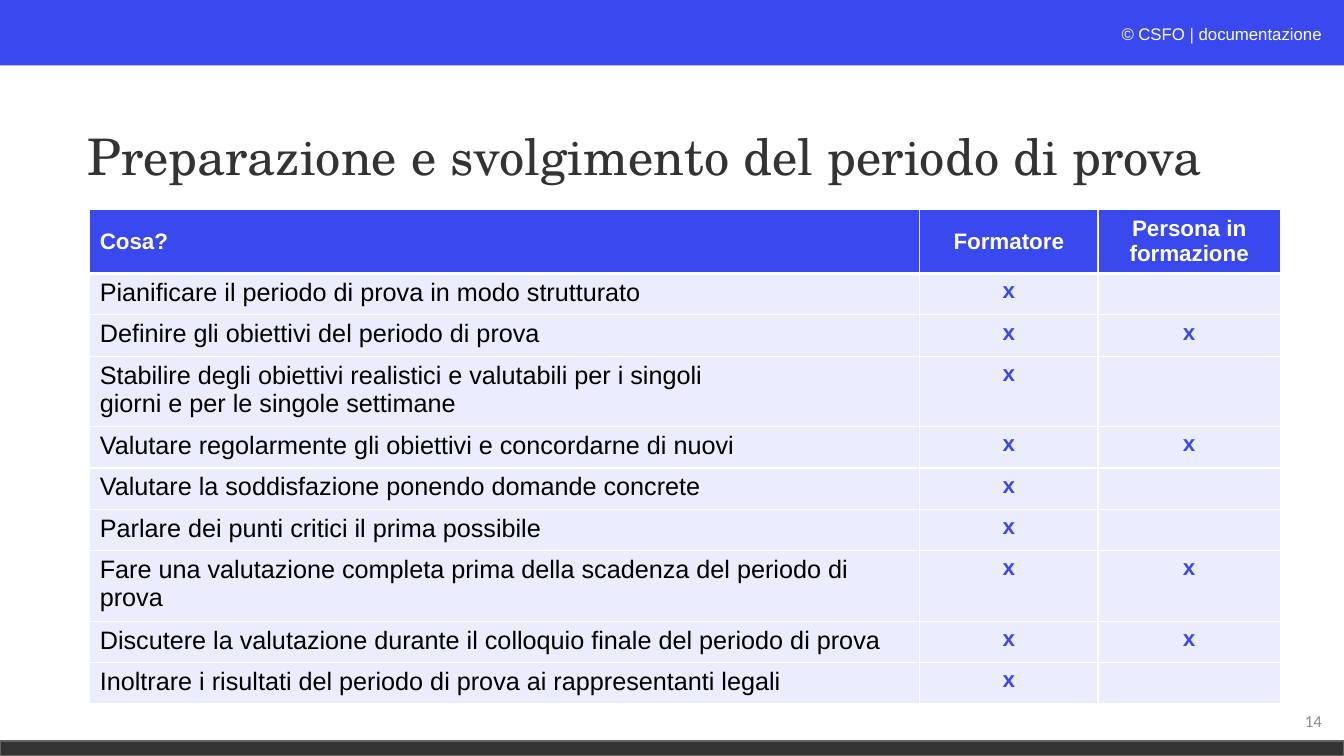
from dataclasses import dataclass

from lxml import etree
from pptx import Presentation
from pptx.dml import color
from pptx.enum import shapes, text
from pptx.oxml import ns
from pptx.util import Inches, Pt

LEFT, MID, RIGHT = text.PP_ALIGN.LEFT, text.PP_ALIGN.CENTER, text.PP_ALIGN.RIGHT
TOP, CENTER = text.MSO_ANCHOR.TOP, text.MSO_ANCHOR.MIDDLE


@dataclass(frozen=True)
class Theme:
    blue: str = "3A49EE"
    pale: str = "EBECFE"
    dark: str = "333333"
    edge: str = "666360"
    gray: str = "8C8C8C"
    white: str = "FFFFFF"
    mark: str = "FCFDFE"
    black: str = "000000"
    sans: str = "Arial"
    serif: str = "TeX Gyre Schola"
    plain: str = "Calibri"
    title: int = 36
    body: int = 18
    head: int = 16
    small: int = 12


class Deck:
    def __init__(self, theme):
        self.theme = theme
        self.show = Presentation()
        self.show.slide_width = Inches(13.33)
        self.show.slide_height = Inches(7.5)
        self.slide = self.show.slides.add_slide(self.show.slide_layouts[6])

    def style(self, frame, size, tint, face, align=LEFT, bold=False):
        for para in frame.paragraphs:
            para.alignment = align
            for run in para.runs:
                font = run.font
                font.size, font.name, font.bold = Pt(size), face, bold
                font.color.rgb = color.RGBColor.from_string(tint)

    def bar(self, box, fill, edge=None):
        bar = self.slide.shapes.add_shape(
            shapes.MSO_SHAPE.RECTANGLE, *map(Inches, box))
        bar.shadow.inherit = False
        bar.fill.solid()
        bar.fill.fore_color.rgb = color.RGBColor.from_string(fill)
        if edge:
            bar.line.color.rgb = color.RGBColor.from_string(edge)
            bar.line.width = Pt(1)
        else:
            bar.line.fill.background()

    def label(self, box, words, size, tint, face, align=LEFT, anchor=CENTER):
        frame = self.slide.shapes.add_textbox(*map(Inches, box)).text_frame
        frame.word_wrap = True
        frame.vertical_anchor = anchor
        frame.text = words
        self.style(frame, size, tint, face, align)
        return frame.paragraphs[0]

    def border(self, cell, **widths):
        props = cell._tc.get_or_add_tcPr()
        for side in "LRTB":
            line = etree.SubElement(props, ns.qn(f"a:ln{side}"),
                                    w=str(Pt(widths.get(side, 1))))
            fill = etree.SubElement(line, ns.qn("a:solidFill"))
            etree.SubElement(fill, ns.qn("a:srgbClr"), val=self.theme.white)

    def cell(self, cell, words, row, col):
        t = self.theme
        self.border(cell, **({"B": 3} if row == 0 else {"T": 3} if row == 1 else {}))
        cell.fill.solid()
        cell.fill.fore_color.rgb = color.RGBColor.from_string(t.pale if row else t.blue)
        cell.vertical_anchor = TOP if row else CENTER
        cell.text_frame.text = words
        if row and not col:
            size, tint, bold = t.body, t.black, False
        else:
            size, tint, bold = t.head, t.blue if row else t.white, True
        self.style(cell.text_frame, size, tint, t.sans, MID if col else LEFT, bold)

    def table(self, box, rows, widths, heights):
        grid = self.slide.shapes.add_table(
            len(rows), len(widths), *map(Inches, box)).table
        for col, width in zip(grid.columns, widths):
            col.width = Inches(width)
        for row, height in zip(grid.rows, heights):
            row.height = Inches(height)
        for r, row in enumerate(rows):
            for c, words in enumerate(row):
                self.cell(grid.cell(r, c), words, r, c)


TASKS = [
    ("Pianificare il periodo di prova in modo strutturato", False),
    ("Definire gli obiettivi del periodo di prova", True),
    ("Stabilire degli obiettivi realistici e valutabili per i singoli\n"
     "giorni e per le singole settimane", False),
    ("Valutare regolarmente gli obiettivi e concordarne di nuovi", True),
    ("Valutare la soddisfazione ponendo domande concrete", False),
    ("Parlare dei punti critici il prima possibile", False),
    ("Fare una valutazione completa prima della scadenza del periodo di prova", True),
    ("Discutere la valutazione durante il colloquio finale del periodo di prova", True),
    ("Inoltrare i risultati del periodo di prova ai rappresentanti legali", False),
]


def main():
    t = Theme()
    deck = Deck(t)
    deck.bar((0, 0, 13.33, 0.65), t.blue)
    deck.bar((0, 7.35, 13.33, 0.15), t.dark, t.edge)

    credit = deck.label((8.62, 0.19, 4.59, 0.3), "© ", t.small, t.mark,
                        t.sans, RIGHT, TOP)
    credit.runs[0].font.italic = True
    owner = credit.add_run()
    owner.text = "CSFO | documentazione"
    owner.font.size, owner.font.name = Pt(t.small), t.sans
    owner.font.color.rgb = color.RGBColor.from_string(t.white)

    rows = [("Cosa?", "Formatore", "Persona in\nformazione")]
    rows += [(task, "x", "x" if both else "") for task, both in TASKS]
    heights = [0.62] + [0.69 if i in (2, 6) else 0.41 for i in range(len(TASKS))]
    deck.table((0.89, 2.08, 11.81, 4.87), rows, (8.23, 1.77, 1.81), heights)

    deck.label((10.21, 6.95, 3, 0.4), "14", t.small, t.gray, t.plain, RIGHT)
    title = deck.label((0.77, 0.85, 11.5, 1.45),
                       "Preparazione e svolgimento del periodo di prova",
                       t.title, t.dark, t.serif)
    title.line_spacing = 0.9
    deck.show.save("out.pptx")


if __name__ == "__main__":
    main()
